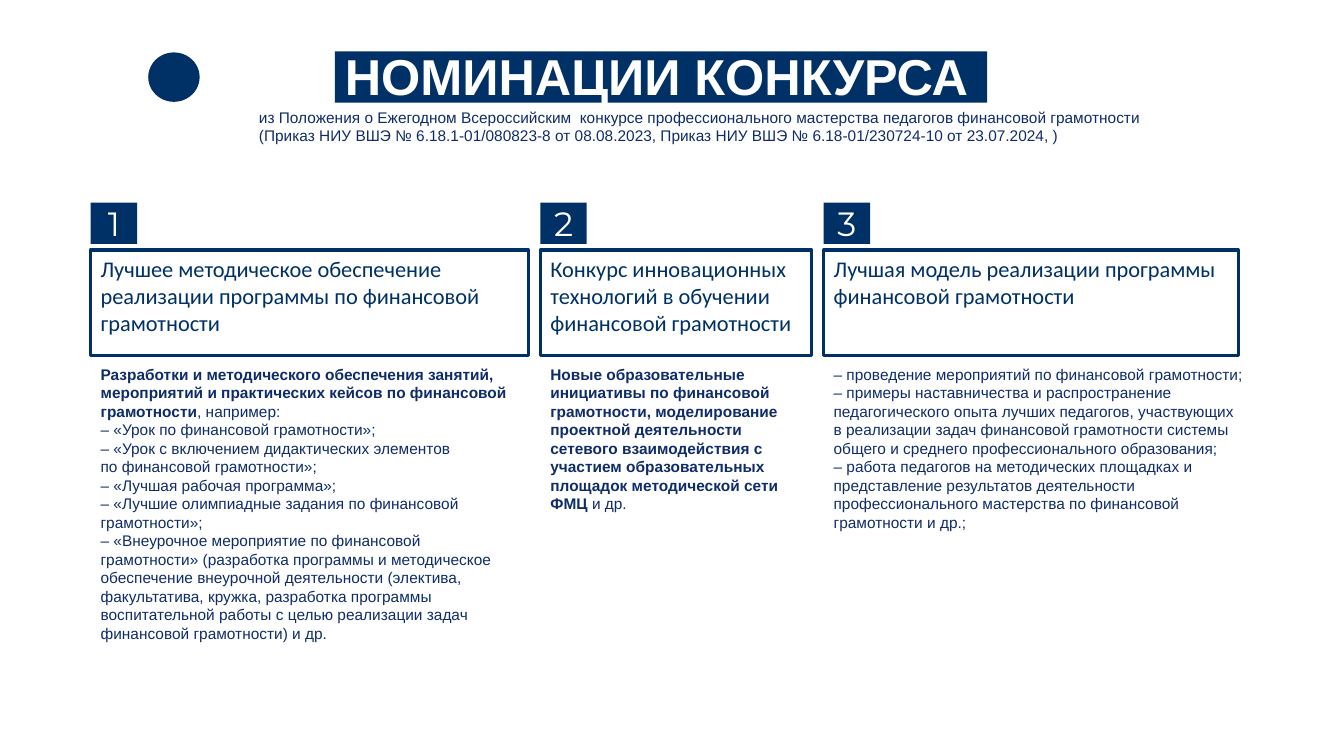
import pptx
import pptx.util
from pptx.dml.color import RGBColor
from pptx.enum.shapes import MSO_SHAPE
from pptx.enum.text import MSO_ANCHOR, MSO_AUTO_SIZE, PP_ALIGN
from pptx.util import Inches

NAVY = RGBColor(0x00, 0x31, 0x66)
INK = RGBColor(0x0F, 0x2C, 0x68)
WHITE = RGBColor(0xFF, 0xFF, 0xFF)

BADGE_TOP, HEADING_TOP, DETAILS_TOP = 2.01, 2.48, 3.57

# Each paragraph is a pair: bold text, then regular text
COLUMNS = [
    {
        "left": 0.9, "width": 4.34, "details_size": (4.34, 2.88),
        "heading": "Лучшее методическое обеспечение реализации программы по финансовой грамотности",
        "details": [
            ("Разработки и методического обеспечения занятий, мероприятий и практических "
             "кейсов по финансовой грамотности", ", например:"),
            ("", "– «Урок по финансовой грамотности»;"),
            ("", "– «Урок с включением дидактических элементов \vпо финансовой грамотности»;"),
            ("", "– «Лучшая рабочая программа»;"),
            ("", "– «Лучшие олимпиадные задания по финансовой грамотности»;"),
            ("", "– «Внеурочное мероприятие по финансовой грамотности» (разработка программы "
             "и методическое обеспечение внеурочной деятельности (электива, факультатива, "
             "кружка, разработка программы воспитательной работы с целью реализации задач "
             "финансовой грамотности) и др."),
        ],
    },
    {
        "left": 5.36, "width": 2.69, "details_size": (2.69, 1.58),
        "heading": "Конкурс инновационных технологий в обучении финансовой грамотности",
        "details": [
            ("Новые образовательные инициативы по финансовой грамотности, моделирование "
             "проектной деятельности сетевого взаимодействия с участием образовательных "
             "площадок методической сети ФМЦ ", "и др."),
        ],
    },
    {
        "left": 8.17, "width": 4.11, "details_size": (4.26, 1.77),
        "heading": "Лучшая модель реализации программы финансовой грамотности",
        "details": [
            ("", "– проведение мероприятий по финансовой грамотности;"),
            ("", "– примеры наставничества и распространение педагогического опыта лучших "
             "педагогов, участвующих в реализации задач финансовой грамотности системы "
             "общего и среднего профессионального образования;"),
            ("", "– работа педагогов на методических площадках и представление результатов "
             "деятельности профессионального мастерства по финансовой грамотности и др.;"),
        ],
    },
]

SUBTITLE = [
    ("", "из Положения о Ежегодном Всероссийским  конкурсе профессионального мастерства "
     "педагогов финансовой грамотности"),
    ("", "(Приказ НИУ ВШЭ № 6.18.1-01/080823-8 от 08.08.2023, "
     "Приказ НИУ ВШЭ № 6.18-01/230724-10 от 23.07.2024, )"),
]


class SlideBuilder:
    """Holds the style and the current slide."""

    def __init__(self, slide):
        self.slide = slide

    def style_runs(self, paragraph, font_name, size, color, bold=False):
        for run in paragraph.runs:
            run.font.name = font_name
            run.font.size = pptx.util.Pt(size)
            run.font.color.rgb = color
            run.font.bold = bold

    def title(self, text, left, top, width, height):
        shape = self.slide.shapes.title
        shape.left, shape.top = Inches(left), Inches(top)
        shape.width, shape.height = Inches(width), Inches(height)
        shape.fill.solid()
        shape.fill.fore_color.rgb = NAVY
        frame = shape.text_frame
        frame.text = text
        frame.word_wrap = True
        frame.auto_size = MSO_AUTO_SIZE.NONE
        frame.vertical_anchor = MSO_ANCHOR.MIDDLE
        frame.margin_left = frame.margin_right = Inches(0.1)
        frame.margin_top, frame.margin_bottom = Inches(0.04), Inches(0)
        paragraph = frame.paragraphs[0]
        paragraph.alignment = PP_ALIGN.LEFT
        paragraph.line_spacing = 0.9
        paragraph.space_before = pptx.util.Pt(0)
        self.style_runs(paragraph, "Arial", 36, WHITE, bold=True)

    def block(self, left, top, width, height, kind=MSO_SHAPE.RECTANGLE, filled=True):
        """Add a solid navy shape, or an outlined one."""
        shape = self.slide.shapes.add_shape(
            kind, Inches(left), Inches(top), Inches(width), Inches(height))
        shape.shadow.inherit = False
        if filled:
            shape.fill.solid()
            shape.fill.fore_color.rgb = NAVY
            shape.line.fill.background()
        else:
            shape.fill.background()
            shape.line.color.rgb = NAVY
            shape.line.width = pptx.util.Pt(2.25)
        return shape

    def badge(self, number, left):
        frame = self.block(left, BADGE_TOP, 0.46, 0.41).text_frame
        frame.text = str(number)
        frame.vertical_anchor = MSO_ANCHOR.MIDDLE
        paragraph = frame.paragraphs[0]
        paragraph.alignment = PP_ALIGN.CENTER
        self.style_runs(paragraph, "Montserrat", 24, WHITE)

    def heading(self, text, left, width):
        frame = self.block(left, HEADING_TOP, width, 1.05, filled=False).text_frame
        frame.text = text
        frame.word_wrap = True
        frame.vertical_anchor = MSO_ANCHOR.TOP
        paragraph = frame.paragraphs[0]
        paragraph.alignment = PP_ALIGN.LEFT
        self.style_runs(paragraph, "Calibri", 16, NAVY)

    def text(self, paragraphs, left, top, width, height):
        box = self.slide.shapes.add_textbox(
            Inches(left), Inches(top), Inches(width), Inches(height))
        frame = box.text_frame
        frame.word_wrap = True
        frame.auto_size = MSO_AUTO_SIZE.SHAPE_TO_FIT_TEXT
        for index, (bold_text, regular_text) in enumerate(paragraphs):
            paragraph = frame.add_paragraph() if index else frame.paragraphs[0]
            paragraph.text = bold_text or regular_text
            self.style_runs(paragraph, "Arial", 11, INK, bold=bool(bold_text))
            if bold_text:
                run = paragraph.add_run()
                run.text = regular_text
                run.font.name = "Arial"
                run.font.size = pptx.util.Pt(11)
                run.font.color.rgb = INK


def main():
    presentation = pptx.Presentation()
    presentation.slide_width = Inches(13.33)
    presentation.slide_height = Inches(7.5)
    slide = presentation.slides.add_slide(presentation.slide_layouts[5])
    builder = SlideBuilder(slide)

    # Header: emblem, title and source
    builder.block(1.47, 0.52, 0.51, 0.49, kind=MSO_SHAPE.OVAL)
    builder.title("НОМИНАЦИИ КОНКУРСА", 3.32, 0.51, 6.47, 0.51)
    builder.text(SUBTITLE, 2.47, 1.02, 9.54, 0.47)

    # Three nominations
    for number, column in enumerate(COLUMNS, start=1):
        left = column["left"]
        builder.heading(column["heading"], left, column["width"])
        builder.badge(number, left)
        builder.text(column["details"], left, DETAILS_TOP, *column["details_size"])

    presentation.save("out.pptx")


if __name__ == "__main__":
    main()
